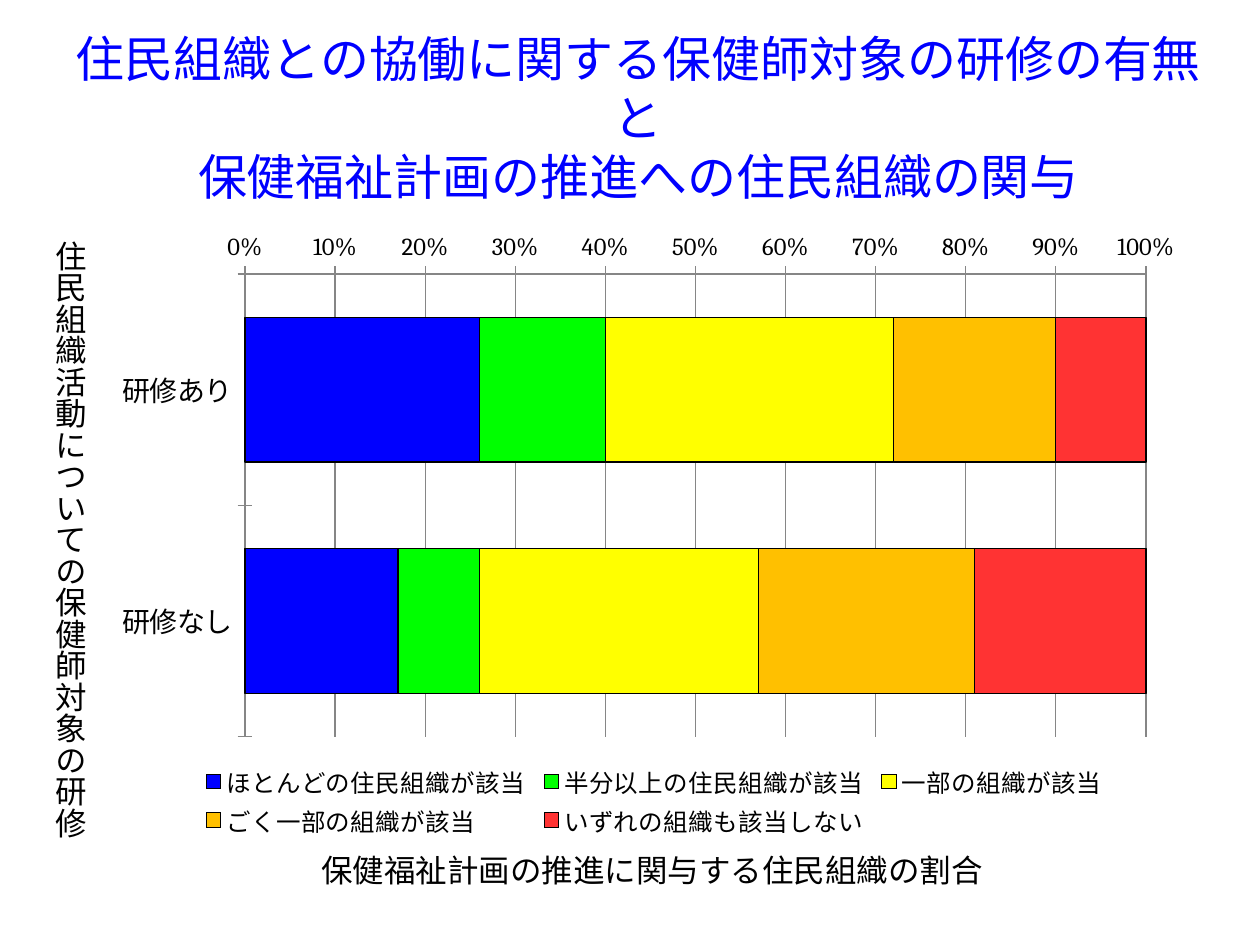
from dataclasses import dataclass

from lxml import etree
from pptx import Presentation
from pptx.chart.data import CategoryChartData
from pptx.dml.color import RGBColor
from pptx.enum.chart import XL_CHART_TYPE, XL_LEGEND_POSITION, XL_TICK_MARK
from pptx.enum.text import MSO_ANCHOR, PP_ALIGN
from pptx.oxml.ns import qn
from pptx.util import Pt

STACKED_BAR = XL_CHART_TYPE.BAR_STACKED_100
LEGEND_BOTTOM = XL_LEGEND_POSITION.BOTTOM
TICK_CROSS = XL_TICK_MARK.CROSS
ANCHOR_TOP, ANCHOR_MIDDLE = MSO_ANCHOR.TOP, MSO_ANCHOR.MIDDLE
ALIGN_LEFT, ALIGN_CENTER = PP_ALIGN.LEFT, PP_ALIGN.CENTER

PX_PER_INCH = 126
EMU_PER_PX = 914400 / PX_PER_INCH


@dataclass(frozen=True)
class Theme:
    """Colours, fonts and type sizes of the slide."""
    title: str = "0000FF"
    ink: str = "000000"
    grid: str = "868686"
    body_font: str = "Calibri"
    number_font: str = "Cambria"
    title_size: int = 28
    label_size: int = 18
    category_size: int = 16
    small_size: int = 14
    base_size: int = 12


THEME = Theme()

CATEGORIES = ["研修あり", "研修なし"]
ANSWERS = [
    ("ほとんどの住民組織が該当", (26, 17), "0000FF"),
    ("半分以上の住民組織が該当", (14, 9), "00FF00"),
    ("一部の組織が該当", (32, 31), "FFFF00"),
    ("ごく一部の組織が該当", (18, 24), "FFC000"),
    ("いずれの組織も該当しない", (10, 19), "FF3333"),
]


def emu(box):
    """Turn px lengths into EMU."""
    return [round(length * EMU_PER_PX) for length in box]


def style_font(font, size, color=THEME.ink, name=THEME.body_font):
    """Set the face, size and colour of a font."""
    font.name = name
    font.size = Pt(size)
    font.color.rgb = RGBColor.from_string(color)


def style_line(line, color):
    """Draw a thin solid line."""
    line.color.rgb = RGBColor.from_string(color)
    line.width = Pt(0.75)


def add_text(page, box, text, size, color=THEME.ink, align=ALIGN_LEFT,
             anchor=ANCHOR_TOP, wrap=True):
    """Add a text box and return its frame."""
    frame = page.shapes.add_textbox(*emu(box)).text_frame
    frame.word_wrap = wrap
    frame.vertical_anchor = anchor
    frame.text = text
    for para in frame.paragraphs:
        para.alignment = align
        for span in para.runs:
            style_font(span.font, size, color)
    return frame


def add_title(page, box):
    """Add the centred slide title."""
    text = "住民組織との協働に関する保健師対象の研修の有無と\v保健福祉計画の推進への住民組織の関与"
    add_text(page, box, text, THEME.title_size, THEME.title, ALIGN_CENTER, ANCHOR_MIDDLE)


def add_side_label(page, box):
    """Add the vertical label beside the chart."""
    frame = add_text(page, box, "住民組織活動についての保健師対象の研修",
                     THEME.label_size, wrap=False)
    frame._txBody.bodyPr.set("vert", "eaVert")


def add_bottom_label(page, box):
    """Add the label below the chart."""
    add_text(page, box, "保健福祉計画の推進に関与する住民組織の割合", THEME.label_size)


def set_layout(parent, outer, inner, is_plot=False):
    """Fix a chart part at a px box inside the chart box."""
    for old in parent.findall(qn("c:layout")):
        parent.remove(old)
    layout = etree.Element(qn("c:layout"))
    manual = etree.SubElement(layout, qn("c:manualLayout"))
    left, top, width, height = inner
    settings = [("layoutTarget", "inner")] if is_plot else []
    settings += [
        ("xMode", "edge"), ("yMode", "edge"),
        ("x", (left - outer[0]) / outer[2]), ("y", (top - outer[1]) / outer[3]),
        ("w", width / outer[2]), ("h", height / outer[3]),
    ]
    for tag, value in settings:
        etree.SubElement(manual, qn(f"c:{tag}")).set("val", str(value))
    if is_plot:
        parent.insert(0, layout)
    else:
        parent.find(qn("c:legendPos")).addnext(layout)


def style_axes(chart):
    """Format the category axis and the percentage axis."""
    category, value = chart.category_axis, chart.value_axis
    category.reverse_order = True
    style_font(category.tick_labels.font, THEME.category_size)
    style_font(value.tick_labels.font, THEME.small_size, name=THEME.number_font)
    value.tick_labels.number_format = "0%"
    value.tick_labels.number_format_is_linked = False
    value.minimum_scale, value.maximum_scale, value.major_unit = 0, 1, 0.1
    value.has_major_gridlines = True
    style_line(value.major_gridlines.format.line, THEME.grid)
    for axis in (category, value):
        axis.major_tick_mark = TICK_CROSS
        style_line(axis.format.line, THEME.grid)


def add_answer_chart(page, box):
    """Add the stacked bars comparing both training groups."""
    left, top, width, height = box
    data = CategoryChartData()
    data.categories = CATEGORIES
    for name, values, _ in ANSWERS:
        data.add_series(name, values)
    chart = page.shapes.add_chart(STACKED_BAR, *emu(box), data).chart
    style_font(chart.font, THEME.base_size)
    chart.has_title = False
    plot = chart.plots[0]
    plot.gap_width, plot.overlap = 60, 100
    plot.vary_by_categories = False
    for series, (_, _, color) in zip(plot.series, ANSWERS):
        series.format.fill.solid()
        series.format.fill.fore_color.rgb = RGBColor.from_string(color)
        style_line(series.format.line, THEME.ink)
    style_axes(chart)
    chart.has_legend = True
    chart.legend.position = LEGEND_BOTTOM
    chart.legend.include_in_layout = False
    style_font(chart.legend.font, THEME.small_size)
    plot_box = (left + 144, top + 54, width - 195, height - 161)
    legend_box = (left + 95, top + 541, width - 180, 80)
    set_layout(chart._chartSpace.chart.plotArea, box, plot_box, is_plot=True)
    set_layout(chart.legend._element, box, legend_box)


def main():
    """Build the slide and save the deck."""
    deck = Presentation()
    deck.slide_width, deck.slide_height = emu((1260, 945))
    page = deck.slides.add_slide(deck.slide_layouts[6])
    add_title(page, (52, 38, 1173, 158))
    add_answer_chart(page, (101, 220, 1096, 624))
    add_side_label(page, (32, 228, 63, 590))
    add_bottom_label(page, (309, 845, 717, 50))
    deck.save("out.pptx")


if __name__ == "__main__":
    main()
